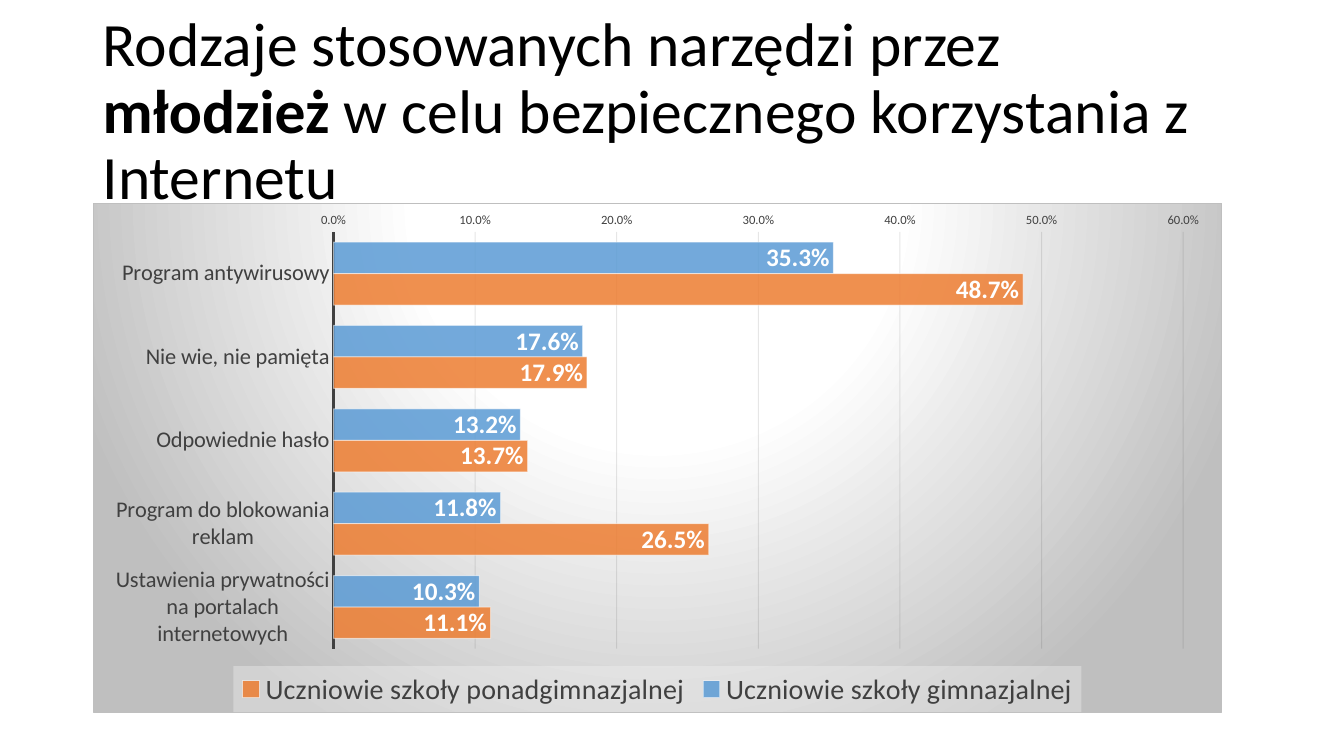
import pptx
import pptx.chart.data
import pptx.dml.color
import pptx.enum.chart
import pptx.enum.text
import pptx.oxml
import pptx.oxml.ns
import pptx.util
from pptx.util import Inches

FONT = "Calibri"
TITLE = [
    ("Rodzaje stosowanych narzędzi przez ", False),
    ("młodzież ", True),
    ("w celu bezpiecznego korzystania z Internetu", False),
]
CATEGORIES = [
    "Program antywirusowy",
    "Nie wie, nie pamięta",
    "Odpowiednie hasło",
    "Program do blokowania reklam",
    "Ustawienia prywatności na portalach internetowych",
]
SERIES = [
    ("Uczniowie szkoły gimnazjalnej", "5B9BD5", [0.353, 0.176, 0.132, 0.118, 0.103]),
    ("Uczniowie szkoły ponadgimnazjalnej", "ED7D31", [0.487, 0.179, 0.137, 0.265, 0.111]),
]
BACKDROP_STOPS = [(0, "FFFFFF"), (39, "FFFFFF"), (100, "BFBFBF")]
DARK = "404040"
PERCENT = "0.0%"


def paint(target, color, opacity=100):
    target.solid()
    target.fore_color.rgb = pptx.dml.color.RGBColor.from_string(color)
    if opacity < 100:
        node = target._xPr.find(".//" + pptx.oxml.ns.qn("a:srgbClr"))
        alpha = node.makeelement(pptx.oxml.ns.qn("a:alpha"), {"val": str(opacity * 1000)})
        node.append(alpha)


def style_font(font, size, color, bold=False):
    font.name = FONT
    font.size = pptx.util.Pt(size)
    font.bold = bold
    paint(font.fill, color)


def style_line(line, width, color, opacity=100):
    line.width = pptx.util.Pt(width)
    paint(line.fill, color, opacity)


def shape_properties(content):
    namespaces = pptx.oxml.ns.nsdecls("c", "a")
    return pptx.oxml.parse_xml(f"<c:spPr {namespaces}>{content}</c:spPr>")


def add_title(page):
    box = page.shapes.add_textbox(Inches(0.92), Inches(0.4), Inches(11.5), Inches(1.45))
    frame = box.text_frame
    frame.word_wrap = True
    frame.vertical_anchor = pptx.enum.text.MSO_ANCHOR.MIDDLE
    para = frame.paragraphs[0]
    para.line_spacing = 0.9
    style_font(para.font, 44, "000000")
    for text, bold in TITLE:
        span = para.add_run()
        span.text = text
        span.font.bold = bold


def style_axes(chart):
    enums = pptx.enum.chart
    categories, values = chart.category_axis, chart.value_axis
    for axis, size in ((categories, 16), (values, 9)):
        axis.major_tick_mark = enums.XL_TICK_MARK.NONE
        axis.minor_tick_mark = enums.XL_TICK_MARK.NONE
        style_font(axis.tick_labels.font, size, DARK)
    categories.reverse_order = True
    style_line(categories.format.line, 1.5, DARK)
    values.minimum_scale, values.maximum_scale, values.major_unit = 0, 0.6, 0.1
    values.tick_labels.number_format = PERCENT
    values.tick_labels.number_format_is_linked = False
    values.format.line.fill.background()
    style_line(values.major_gridlines.format.line, 0.75, "0D0D0D", 10)


def style_bars(chart):
    plot = chart.plots[0]
    plot.gap_width = 65
    plot.vary_by_categories = False
    for series, (_, color, _) in zip(plot.series, SERIES):
        paint(series.format.fill, color, 85)
        style_line(series.format.line, 0.75, "FFFFFF", 50)
        labels = series.data_labels
        labels.show_value = True
        labels.position = pptx.enum.chart.XL_LABEL_POSITION.INSIDE_END
        labels.number_format = PERCENT
        labels.number_format_is_linked = False
        style_font(labels.font, 18, "FFFFFF", True)


def style_legend(chart):
    chart.has_legend = True
    legend = chart.legend
    legend.position = pptx.enum.chart.XL_LEGEND_POSITION.BOTTOM
    legend.include_in_layout = False
    style_font(legend.font, 20, DARK)
    panel = shape_properties(
        '<a:solidFill><a:srgbClr val="F2F2F2"><a:alpha val="39000"/></a:srgbClr></a:solidFill>'
        "<a:ln><a:noFill/></a:ln>"
    )
    legend._element.find(pptx.oxml.ns.qn("c:overlay")).addnext(panel)


def style_backdrop(chart):
    stops = "".join(
        f'<a:gs pos="{place * 1000}"><a:srgbClr val="{color}"/></a:gs>'
        for place, color in BACKDROP_STOPS
    )
    backdrop = shape_properties(
        f'<a:gradFill><a:gsLst>{stops}</a:gsLst><a:path path="circle">'
        '<a:fillToRect l="50000" t="-80000" r="50000" b="180000"/></a:path></a:gradFill>'
        '<a:ln w="9525"><a:solidFill><a:srgbClr val="BFBFBF"/></a:solidFill></a:ln>'
    )
    chart._chartSpace.find(pptx.oxml.ns.qn("c:chart")).addnext(backdrop)


def add_tools_chart(page):
    data = pptx.chart.data.CategoryChartData(number_format=PERCENT)
    data.categories = CATEGORIES
    for name, _, values in SERIES:
        data.add_series(name, values)
    chart = page.shapes.add_chart(
        pptx.enum.chart.XL_CHART_TYPE.BAR_CLUSTERED,
        Inches(0.92), Inches(2.01), Inches(11.2), Inches(5.06), data,
    ).chart
    chart.has_title = False
    style_font(chart.font, 10, "000000")
    style_axes(chart)
    style_bars(chart)
    style_legend(chart)
    style_backdrop(chart)


def main():
    deck = pptx.Presentation()
    deck.slide_width, deck.slide_height = Inches(13.33), Inches(7.5)
    page = deck.slides.add_slide(deck.slide_layouts[6])
    add_title(page)
    add_tools_chart(page)
    deck.save("out.pptx")


if __name__ == "__main__":
    main()
